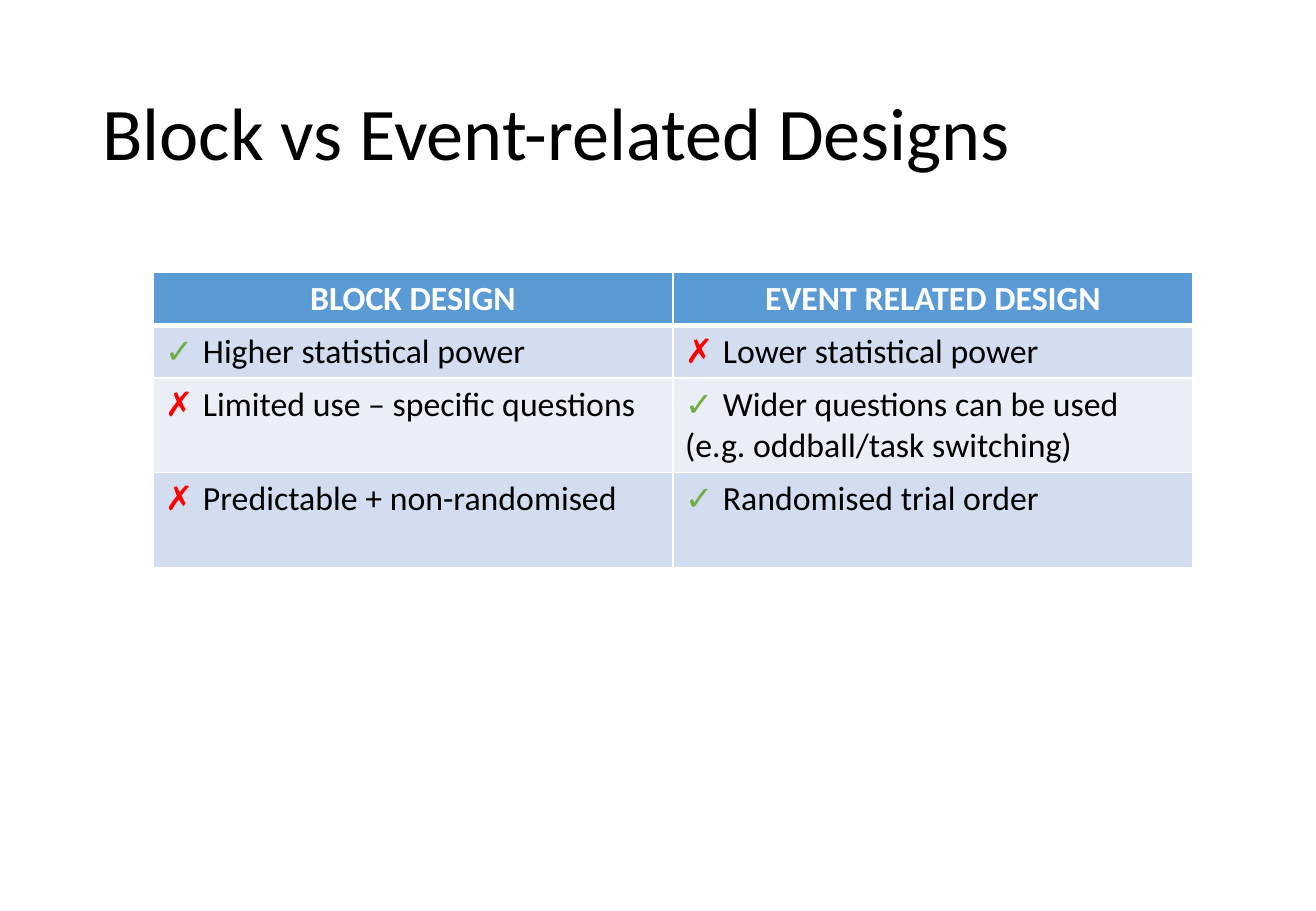
from lxml import etree
from pptx import Presentation
from pptx.dml.color import RGBColor
from pptx.enum.text import MSO_ANCHOR, PP_ALIGN
from pptx.oxml.ns import qn
from pptx.util import Cm, Pt

MIDDLE = MSO_ANCHOR.MIDDLE
CENTER = PP_ALIGN.CENTER

BLACK = RGBColor(0x00, 0x00, 0x00)
WHITE = RGBColor(0xFF, 0xFF, 0xFF)
BLUE = RGBColor(0x5B, 0x9B, 0xD5)
BANDS = (RGBColor(0xD2, 0xDE, 0xEF), RGBColor(0xEA, 0xEF, 0xF7))
MARKS = {"✓": RGBColor(0x70, 0xAD, 0x47), "✗": RGBColor(0xFF, 0x00, 0x00)}

TITLE = "Block vs Event-related Designs"
HEADS = ("BLOCK DESIGN", "EVENT RELATED DESIGN")
ROWS = (
    (("✓", "Higher statistical power"), ("✗", "Lower statistical power")),
    (("✗", "Limited use – specific questions"),
     ("✓", "Wider questions can be used (e.g. oddball/task switching)")),
    (("✗", "Predictable + non-randomised"), ("✓", "Randomised trial order")),
)
WIDTH = 10.87
HEIGHTS = (1.1, 1.1, 1.98, 1.98)


def style(font, name, color):
    font.name = name
    font.color.rgb = color


def edge(cell, low):
    props = cell._tc.get_or_add_tcPr()
    for side, size in (("L", 1), ("R", 1), ("T", 1), ("B", low)):
        line = etree.SubElement(props, qn("a:ln" + side), w=str(Pt(size)))
        fill = etree.SubElement(line, qn("a:solidFill"))
        etree.SubElement(fill, qn("a:srgbClr"), val=str(WHITE))


def paint(cell, color, low=1):
    edge(cell, low)
    cell.fill.solid()
    cell.fill.fore_color.rgb = color
    para = cell.text_frame.paragraphs[0]
    para.font.size = Pt(20)
    return para


def add_title(slide):
    box = slide.shapes.add_textbox(Cm(1.89), Cm(1.01), Cm(23.73), Cm(3.68))
    frame = box.text_frame
    frame.word_wrap = True
    frame.vertical_anchor = MIDDLE
    para = frame.paragraphs[0]
    para.text = TITLE
    para.line_spacing = 0.9
    para.font.size = Pt(44)
    style(para.font, "Calibri", BLACK)


def add_grid(slide):
    grid = slide.shapes.add_table(
        len(HEIGHTS), len(HEADS), Cm(3.2), Cm(5.7),
        Cm(WIDTH * len(HEADS)), Cm(sum(HEIGHTS))).table
    for row, height in zip(grid.rows, HEIGHTS):
        row.height = Cm(height)
    for col, head in enumerate(HEADS):
        grid.columns[col].width = Cm(WIDTH)
        para = paint(grid.cell(0, col), BLUE, 3)
        para.text = head
        para.alignment = CENTER
        para.font.bold = True
        style(para.font, "Calibri", WHITE)
    for num, row in enumerate(ROWS):
        for col, (mark, text) in enumerate(row):
            para = paint(grid.cell(num + 1, col), BANDS[num % 2])
            para.font.bold = False
            for part, name, color in ((mark + " ", "Arial", MARKS[mark]),
                                      (text, "Calibri", BLACK)):
                run = para.add_run()
                run.text = part
                style(run.font, name, color)


def main():
    deck = Presentation()
    deck.slide_width = Cm(27.51)
    deck.slide_height = Cm(19.05)
    slide = deck.slides.add_slide(deck.slide_layouts[6])
    add_title(slide)
    add_grid(slide)
    deck.save("out.pptx")


if __name__ == "__main__":
    main()
